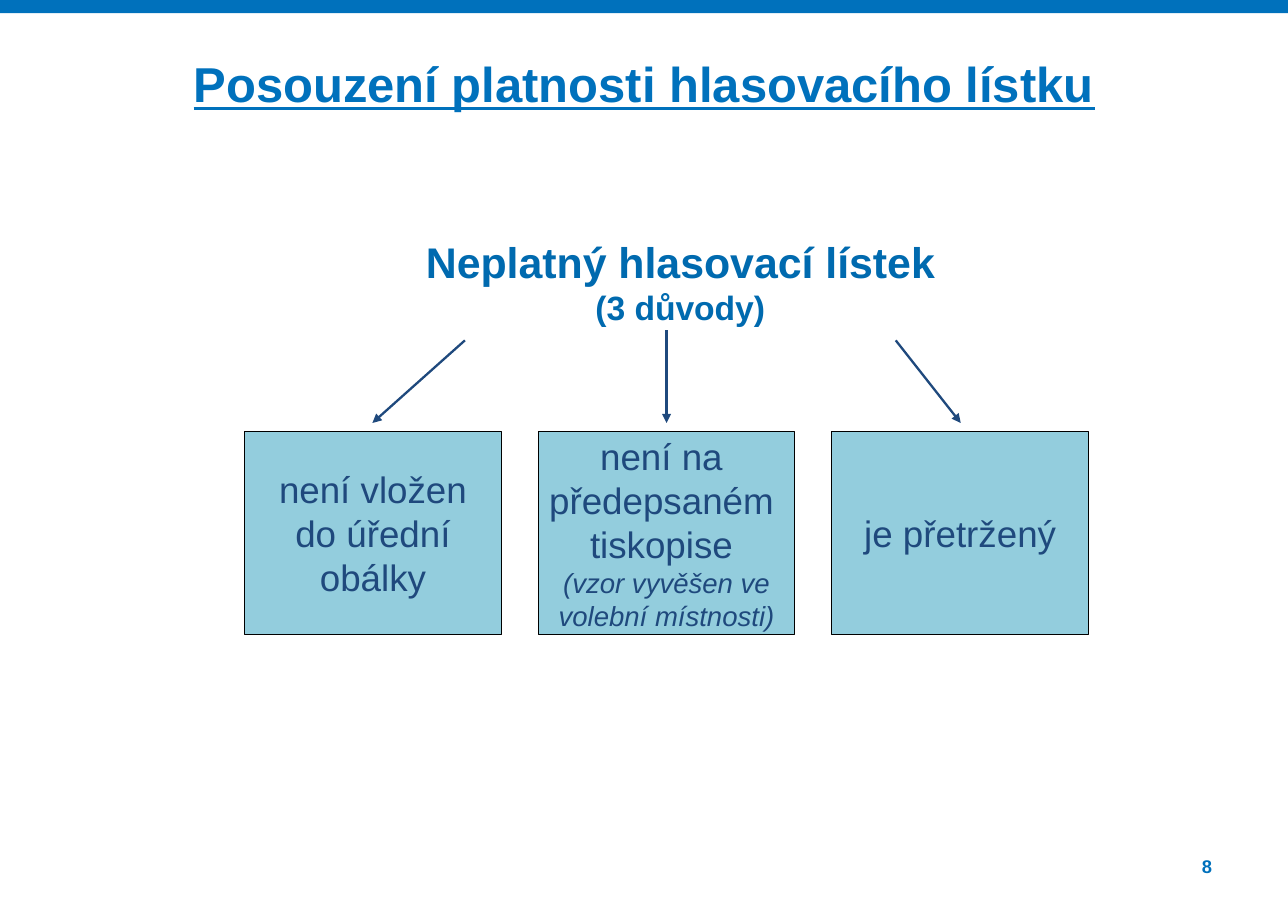
from pptx import Presentation
from pptx.dml.color import RGBColor
from pptx.enum.shapes import MSO_CONNECTOR, MSO_SHAPE
from pptx.enum.text import MSO_ANCHOR, PP_ALIGN
from pptx.oxml.ns import qn
from pptx.util import Inches, Pt
from lxml.etree import SubElement

COLORS = {
    "blue": "0071BC",
    "heading": "006AAF",
    "navy": "1F497D",
    "reason": "93CDDD",
    "border": "000000",
}
PAGE_WIDTH, PAGE_HEIGHT = 11.69, 8.27
REASON_WIDTH, REASON_HEIGHT, REASON_STEP = 2.33, 1.84, 2.665

# Every line of a reason is (text, size, italic).
REASONS = [
    [("není vložen do úřední obálky", 24, False)],
    [
        ("není na ", 24, False),
        ("předepsaném ", 24, False),
        ("tiskopise ", 24, False),
        ("(vzor vyvěšen ve", 18, True),
        ("volební místnosti)", 18, True),
    ],
    [("je přetržený", 24, False)],
]
ARROWS = [(4.22, 3.09, 3.38), (6.05, 3, 6.05), (8.13, 3.09, 8.72)]
ARROW_END = 3.84


def color(name):
    return RGBColor.from_string(COLORS[name])


def write_lines(frame, lines, color_name, bold=False, align=PP_ALIGN.CENTER):
    """Fill one paragraph with lines of (text, size, italic)."""
    para = frame.paragraphs[0]
    para.text = "\n".join(text for text, _, _ in lines)
    para.alignment = align
    for span, (_, size, italic) in zip(para.runs, lines):
        span.font.name = "Arial"
        span.font.size = Pt(size)
        span.font.bold = bold
        span.font.italic = italic
        span.font.color.rgb = color(color_name)


def add_rectangle(page, left, top, width, height, fill):
    box = page.shapes.add_shape(MSO_SHAPE.RECTANGLE, Inches(left), Inches(top),
                                Inches(width), Inches(height))
    box.shadow.inherit = False
    box.fill.solid()
    box.fill.fore_color.rgb = color(fill)
    box.line.fill.background()
    return box


def add_text(page, left, top, width, height, inset=True):
    box = page.shapes.add_textbox(Inches(left), Inches(top), Inches(width), Inches(height))
    frame = box.text_frame
    frame.word_wrap = True
    if not inset:
        frame.margin_left = frame.margin_right = 0
        frame.margin_top = frame.margin_bottom = 0
    return frame


def add_page_frame(page, width, height):
    """Draw the top band and the page number."""
    add_rectangle(page, 0, 0, width, 0.12, "blue")
    number = add_text(page, width - 1.47, height - 0.51, 0.78, 0.21, inset=False)
    write_lines(number, [("8", 12, False)], "blue", bold=True, align=PP_ALIGN.RIGHT)


def add_title(page, left, top, width, height):
    frame = add_text(page, left, top, width, height, inset=False)
    write_lines(frame, [("Posouzení platnosti hlasovacího lístku", 32, False)],
                "blue", bold=True)
    frame.paragraphs[0].runs[0].font.underline = True


def add_heading(page, left, top, width, height):
    frame = add_text(page, left, top, width, height)
    write_lines(frame, [("Neplatný hlasovací lístek", 28, False), ("(3 důvody)", 22, False)],
                "heading", bold=True)


def add_reasons(page, left, top):
    for index, lines in enumerate(REASONS):
        box = add_rectangle(page, left + index * REASON_STEP, top,
                            REASON_WIDTH, REASON_HEIGHT, "reason")
        box.line.color.rgb = color("border")
        box.line.width = Pt(0.75)
        frame = box.text_frame
        frame.word_wrap = len(lines) == 1
        frame.vertical_anchor = MSO_ANCHOR.MIDDLE
        write_lines(frame, lines, "navy")


def add_arrows(page):
    for start_x, start_y, end_x in ARROWS:
        arrow = page.shapes.add_connector(MSO_CONNECTOR.STRAIGHT, Inches(start_x),
                                          Inches(start_y), Inches(end_x), Inches(ARROW_END))
        arrow.line.color.rgb = color("navy")
        arrow.line.width = Pt(1.5)
        properties = arrow.line._get_or_add_ln()
        SubElement(properties, qn("a:tailEnd"), type="triangle")
        SubElement(properties.getparent(), qn("a:effectLst"))


def main():
    deck = Presentation()
    deck.slide_width = Inches(PAGE_WIDTH)
    deck.slide_height = Inches(PAGE_HEIGHT)
    page = deck.slides.add_slide(deck.slide_layouts[6])
    add_page_frame(page, PAGE_WIDTH, PAGE_HEIGHT)
    add_title(page, 0.81, 0.49, 10.08, 0.83)
    add_heading(page, 2.55, 2.09, 7.25, 0.94)
    add_reasons(page, 2.22, 3.92)
    add_arrows(page)
    deck.save("out.pptx")


if __name__ == "__main__":
    main()
